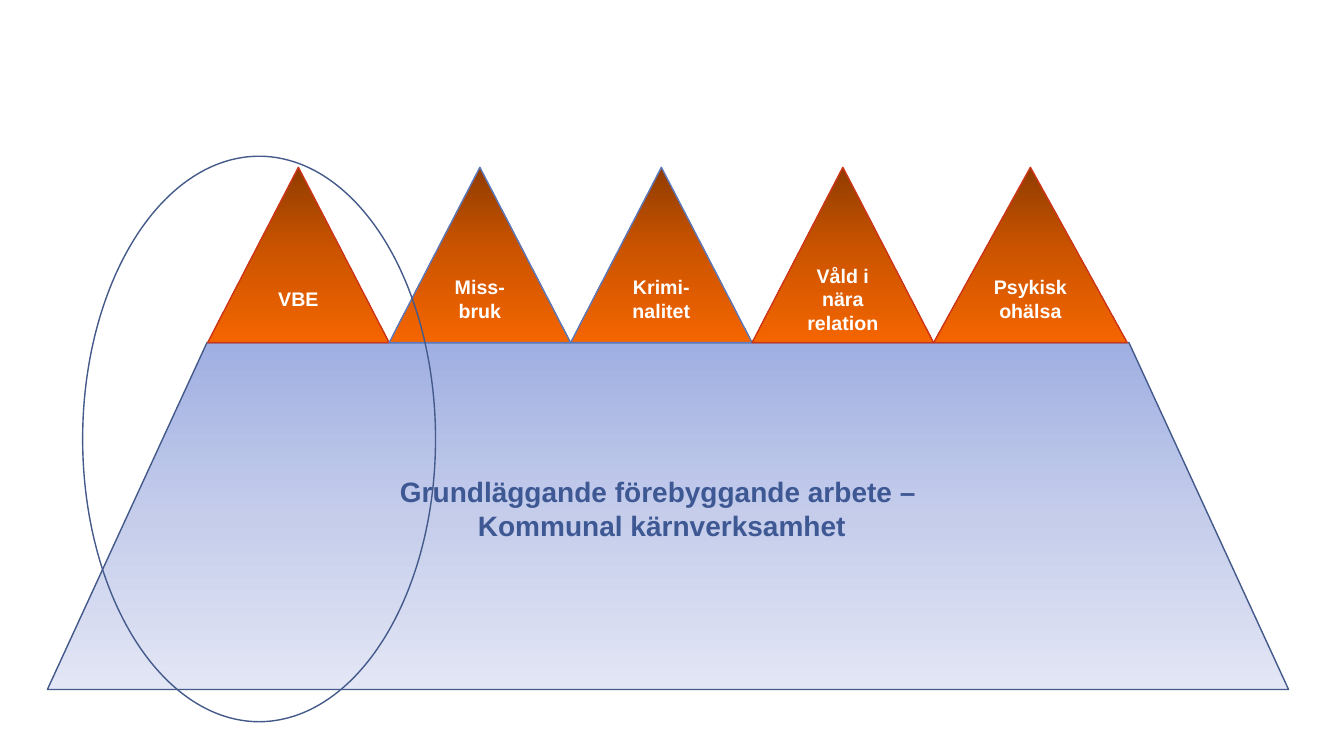
"""Build a slide of problem-area peaks standing on a shared preventive base."""

from copy import deepcopy
from dataclasses import dataclass

from pptx import Presentation
from pptx.dml.color import RGBColor
from pptx.enum.shapes import MSO_SHAPE
from pptx.enum.text import MSO_ANCHOR, PP_ALIGN
from pptx.oxml.ns import qn
from pptx.shapes.autoshape import Shape
from pptx.slide import Slide
from pptx.text.text import TextFrame
from pptx.util import Emu, Pt

PIXEL = 9144
COLOURS = {
    "white": "FFFFFF",
    "navy": "445A8A",
    "heading": "3E5894",
    "red": "CF3619",
    "blue": "5C79BB",
}
BASE_GRADIENT = ("9FAFE2", "C5CDEB", "E2E6F5")
PEAK_GRADIENT = ("913C00", "CE5500", "F46500")
PEAK_LEFT, PEAK_TOP, PEAK_HEIGHT = 206, 166, 174


@dataclass(frozen=True)
class Box:
    left: int
    top: int
    width: int
    height: int

    def emu(self) -> tuple[Emu, ...]:
        sides = (self.left, self.top, self.width, self.height)
        return tuple(Emu(side * PIXEL) for side in sides)


@dataclass(frozen=True)
class Peak:
    label: str
    outline: str
    width: int = 180


PEAKS = (
    Peak("VBE", "red"),
    Peak("Miss-bruk", "blue"),
    Peak("Krimi-nalitet", "blue"),
    Peak("Våld i nära relation", "red"),
    Peak("Psykisk ohälsa", "red", width=192),
)


def colour(name: str) -> RGBColor:
    return RGBColor.from_string(COLOURS[name])


def fill_gradient(shape: Shape, shades: tuple[str, ...]) -> None:
    shape.fill.gradient()
    shape.fill.gradient_angle = 270
    stop_list = shape._element.spPr.find(f".//{qn('a:gsLst')}")
    while len(stop_list) < len(shades):
        stop_list.append(deepcopy(stop_list[0]))
    for index, (stop, shade) in enumerate(zip(shape.fill.gradient_stops, shades)):
        stop.position = index / (len(shades) - 1)
        stop.color.rgb = RGBColor.from_string(shade)


def add_outlined(
    slide: Slide, kind: MSO_SHAPE, box: Box, outline: str, shades: tuple[str, ...] = ()
) -> Shape:
    shape = slide.shapes.add_shape(kind, *box.emu())
    shape.shadow.inherit = False
    shape.line.color.rgb = colour(outline)
    shape.line.width = Pt(1)
    if shades:
        fill_gradient(shape, shades)
    else:
        shape.fill.background()
    return shape


def write_text(frame: TextFrame, text: str, *, size: int, ink: str) -> None:
    frame.word_wrap = True
    frame.text = text
    for para in frame.paragraphs:
        para.alignment = PP_ALIGN.CENTER
        for span in para.runs:
            span.font.name = "Arial"
            span.font.size = Pt(size)
            span.font.bold = True
            span.font.color.rgb = colour(ink)


def add_peaks(slide: Slide) -> None:
    left = PEAK_LEFT
    for peak in PEAKS:
        box = Box(left, PEAK_TOP, peak.width, PEAK_HEIGHT)
        triangle = add_outlined(
            slide, MSO_SHAPE.ISOSCELES_TRIANGLE, box, peak.outline, PEAK_GRADIENT
        )
        frame = triangle.text_frame
        frame.vertical_anchor = MSO_ANCHOR.MIDDLE
        frame.margin_left = frame.margin_right = Emu(5 * PIXEL)
        write_text(frame, peak.label, size=14, ink="white")
        left += peak.width


def main() -> None:
    deck = Presentation()
    deck.slide_width, deck.slide_height = Emu(1333 * PIXEL), Emu(750 * PIXEL)
    page = deck.slides.add_slide(deck.slide_layouts[6])

    base = add_outlined(
        page, MSO_SHAPE.TRAPEZOID, Box(47, 340, 1231, 344), "navy", BASE_GRADIENT
    )
    base.adjustments[0] = 0.46
    add_peaks(page)

    heading = page.shapes.add_textbox(*Box(214, 466, 885, 77).emu())
    write_text(
        heading.text_frame,
        "Grundläggande förebyggande arbete – \nKommunal kärnverksamhet",
        size=20,
        ink="heading",
    )
    add_outlined(page, MSO_SHAPE.OVAL, Box(82, 155, 350, 561), "navy")

    deck.save("out.pptx")


if __name__ == "__main__":
    main()
